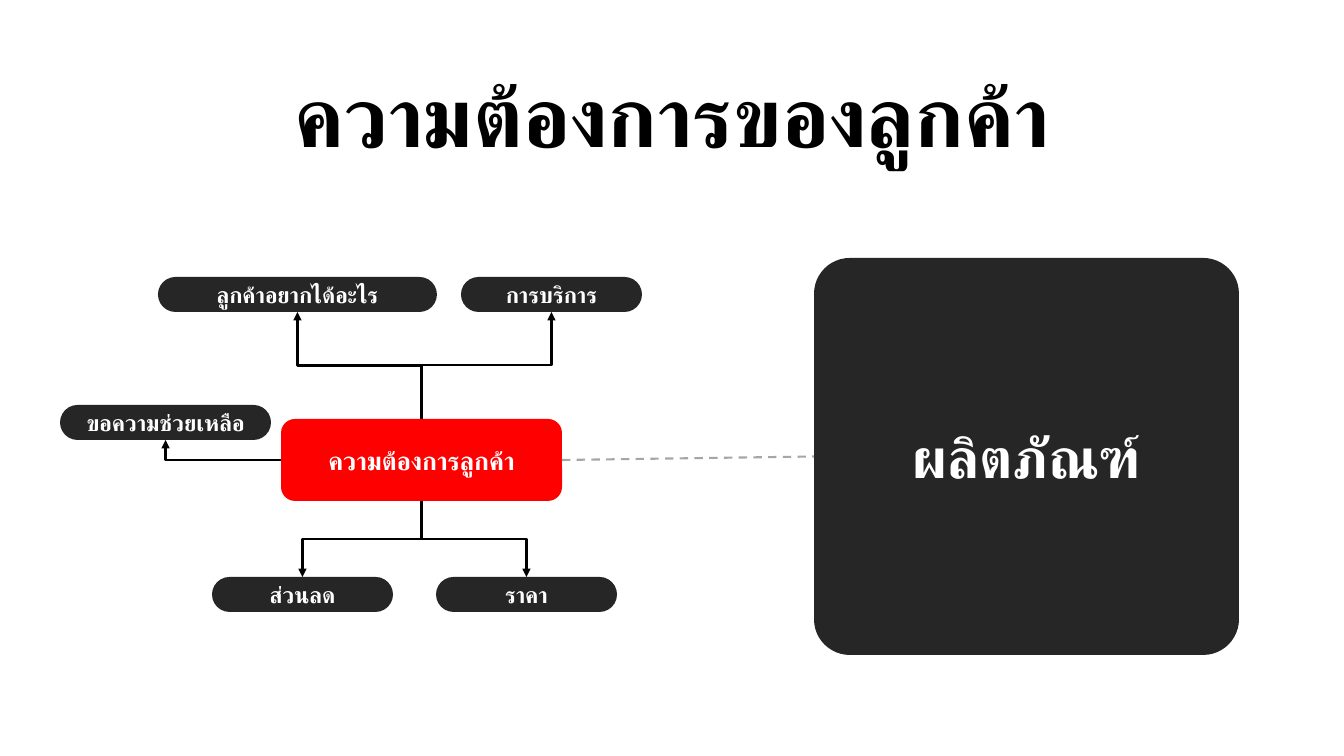
from lxml import etree
from pptx import Presentation
from pptx import util as u
from pptx.dml.color import RGBColor
from pptx.enum import dml, shapes, text
from pptx.oxml.ns import qn

COLORS = {"black": "000000", "white": "FFFFFF", "dark": "262626",
          "red": "FF0000", "gray": "A6A6A6"}
FONT = "Arial"
SCALE = 914400 / 100.8
TOP, BOTTOM, LEFT, RIGHT = 0, 2, 1, 3


def px(value):
    return u.Emu(round(value * SCALE))


def color(name):
    return RGBColor.from_string(COLORS[name])


class DiagramSlide:
    """Draws styled diagram elements on one slide."""

    def __init__(self, presentation):
        self.slide = presentation.slides.add_slide(presentation.slide_layouts[5])

    def label(self, shape, content, size, font_color):
        frame = shape.text_frame
        frame.text = content
        frame.word_wrap = True
        paragraph = frame.paragraphs[0]
        paragraph.alignment = text.PP_ALIGN.CENTER
        run = paragraph.runs[0]
        run.font.name = FONT
        run.font.size = u.Pt(size)
        run.font.bold = True
        run.font.color.rgb = color(font_color)
        complex_font = etree.SubElement(run.font._element, qn("a:cs"))
        complex_font.set("typeface", FONT)

    def title(self, content, left, top, width, height):
        shape = self.slide.shapes.title
        shape.left, shape.top = px(left), px(top)
        shape.width, shape.height = px(width), px(height)
        self.label(shape, content, 60, "black")
        shape.text_frame.vertical_anchor = text.MSO_ANCHOR.TOP
        shape.text_frame.auto_size = text.MSO_AUTO_SIZE.SHAPE_TO_FIT_TEXT

    def box(self, content, left, top, width, height, size=16, fill="dark", rounding=0.5):
        shape = self.slide.shapes.add_shape(
            shapes.MSO_SHAPE.ROUNDED_RECTANGLE, px(left), px(top), px(width), px(height))
        shape.adjustments[0] = rounding
        shape.shadow.inherit = False
        shape.fill.solid()
        shape.fill.fore_color.rgb = color(fill)
        shape.line.fill.background()
        self.label(shape, content, size, "white")
        shape.text_frame.vertical_anchor = text.MSO_ANCHOR.MIDDLE
        return shape

    def connector(self, kind, begin, end, line_color):
        connector = self.slide.shapes.add_connector(kind, *begin, *end)
        connector.line.color.rgb = color(line_color)
        connector.line.width = u.Pt(1.5)
        etree.SubElement(connector._element.spPr, qn("a:effectLst"))
        return connector

    def dashed_link(self, source, target):
        connector = self.connector(shapes.MSO_CONNECTOR.STRAIGHT, (0, 0), (0, 0), "gray")
        connector.begin_connect(source, RIGHT)
        connector.end_connect(target, LEFT)
        connector.line.dash_style = dml.MSO_LINE.DASH

    def elbow_arrow(self, source, source_side, target, target_side):
        start_x, start_y = self.side_middle(source, source_side)
        end_x, end_y = self.side_middle(target, target_side)
        middle_x, middle_y = (start_x + end_x) // 2, (start_y + end_y) // 2
        half_x, half_y = (end_x - start_x) // 2, (end_y - start_y) // 2
        single_bend = source_side == LEFT
        run_x, run_y = (-half_x, -half_y) if single_bend else (half_y, -half_x)
        connector = self.connector(
            shapes.MSO_CONNECTOR.ELBOW,
            (middle_x - run_x, middle_y - run_y),
            (middle_x + run_x, middle_y + run_y), "black")
        properties = connector._element.spPr
        degrees = 180 if single_bend else 90
        properties.find(qn("a:xfrm")).set("rot", str(degrees * 60000))
        if single_bend:
            properties.find(qn("a:prstGeom")).set("prst", "bentConnector2")
        arrowhead = etree.SubElement(properties.find(qn("a:ln")), qn("a:tailEnd"))
        arrowhead.set("type", "triangle")

    def side_middle(self, shape, side):
        center_x = shape.left + shape.width // 2
        center_y = shape.top + shape.height // 2
        return {TOP: (center_x, shape.top), LEFT: (shape.left, center_y),
                BOTTOM: (center_x, shape.top + shape.height),
                RIGHT: (shape.left + shape.width, center_y)}[side]


def main():
    presentation = Presentation()
    presentation.slide_width, presentation.slide_height = px(1344), px(756)
    diagram = DiagramSlide(presentation)
    diagram.title("ความต้องการของลูกค้า", 0, 58, 1344, 112)
    needs = diagram.box("ความต้องการลูกค้า", 281, 419, 281, 82,
                        size=18, fill="red", rounding=0.17)
    product = diagram.box("ผลิตภัณฑ์", 814, 258, 425, 397, size=40, rounding=0.09)
    topics = [
        ("ลูกค้าอยากได้อะไร", 158, 277, 279, TOP, BOTTOM),
        ("การบริการ", 461, 277, 181, TOP, BOTTOM),
        ("ขอความช่วยเหลือ", 60, 405, 211, LEFT, BOTTOM),
        ("ส่วนลด", 212, 577, 181, BOTTOM, TOP),
        ("ราคา", 436, 577, 181, BOTTOM, TOP),
    ]
    for content, left, top, width, needs_side, topic_side in topics:
        topic = diagram.box(content, left, top, width, 35)
        diagram.elbow_arrow(needs, needs_side, topic, topic_side)
    diagram.dashed_link(needs, product)
    presentation.save("out.pptx")


if __name__ == "__main__":
    main()
